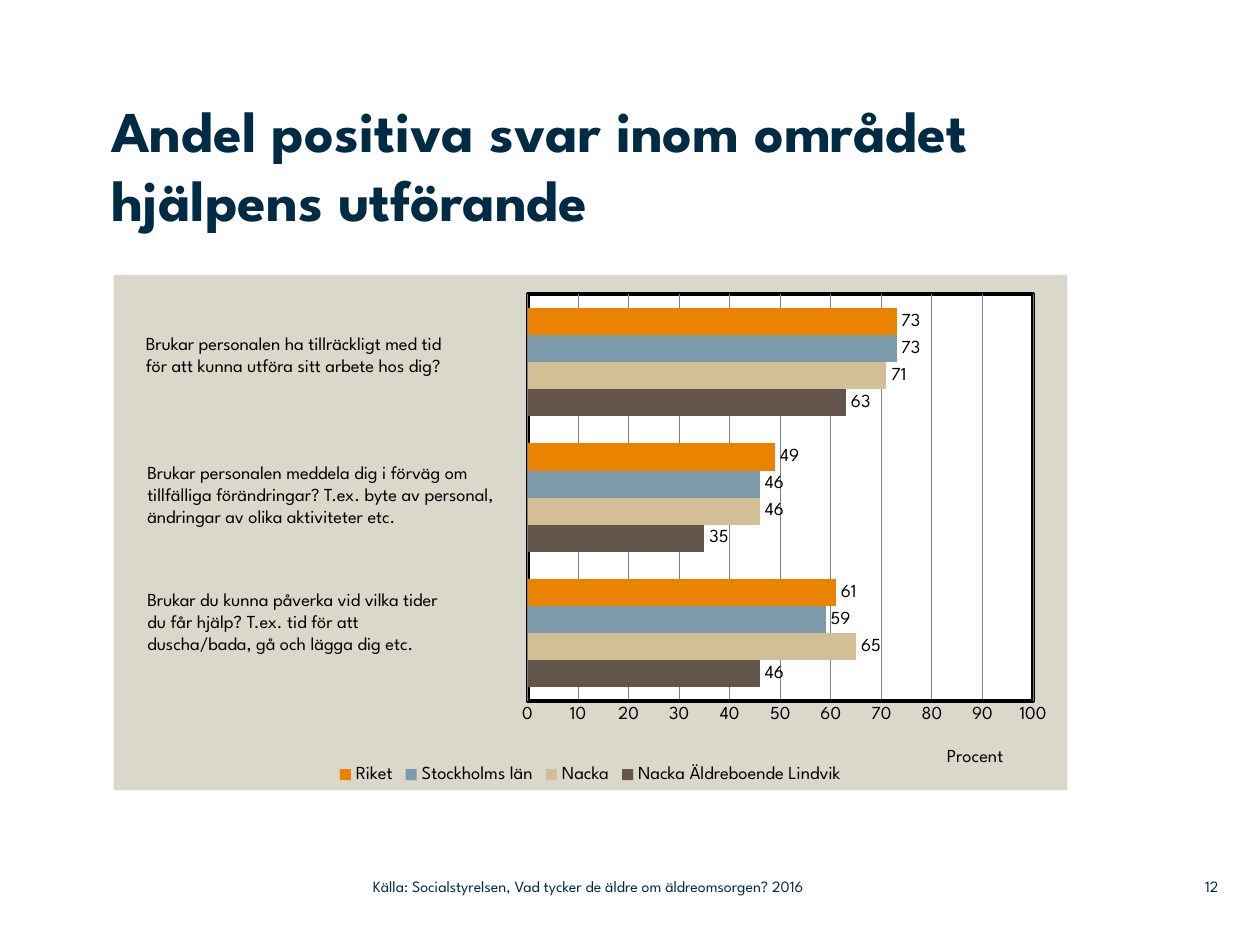
from lxml import etree
from pptx import Presentation
from pptx import util as u
from pptx.chart.data import CategoryChartData
from pptx.dml.color import RGBColor
from pptx.enum import chart as ch, text
from pptx.oxml import parse_xml
from pptx.oxml.ns import nsdecls, qn

FONT = "League Spartan"
NAVY = "002B45"
BLACK = "000000"
SERIES = [
    ("Nacka Äldreboende Lindvik", (46, 35, 63), "635549"),
    ("Nacka", (65, 46, 71), "D3BF96"),
    ("Stockholms län", (59, 46, 73), "7D9AAA"),
    ("Riket", (61, 49, 73), "E98300"),
]
ASKS = [
    ((2.69, 6.58, 7.59, 1.14),
     ["Brukar personalen ha tillräckligt med tid",
      "för att kunna utföra sitt arbete hos dig?"]),
    ((2.72, 9.17, 7.54, 2.06),
     ["Brukar personalen meddela dig i förväg om tillfälliga förändringar? "
      "T.ex. byte av personal, ändringar av olika aktiviteter etc."]),
    ((2.72, 11.73, 7.54, 1.6),
     ["Brukar du kunna påverka vid vilka tider",
      "du får hjälp? T.ex. tid för att",
      "duscha/bada, gå och lägga dig etc."]),
]


def rgb(code):
    return RGBColor.from_string(code)


def style(font, size, color, bold=False):
    font.name, font.size, font.bold = FONT, u.Pt(size), bold
    font.color.rgb = rgb(color)


def write(slide, box, lines, size, color, bold=False, pad=True,
          mid=False, right=False):
    """Add a text box with one paragraph per line."""
    frame = slide.shapes.add_textbox(*map(u.Cm, box)).text_frame
    frame.word_wrap = True
    if not pad:
        frame.margin_left = frame.margin_right = 0
        frame.margin_top = frame.margin_bottom = 0
    if mid:
        frame.vertical_anchor = text.MSO_ANCHOR.MIDDLE
    frame.text = "\n".join(lines)
    for par in frame.paragraphs:
        style(par.font, size, color, bold)
        if right:
            par.alignment = text.PP_ALIGN.RIGHT


def place(node, index, inner=False, **spots):
    """Give a chart part a manual layout, in shares of the chart."""
    for old in node.findall(qn("c:layout")):
        node.remove(old)
    lay = etree.Element(qn("c:layout"))
    man = etree.SubElement(lay, qn("c:manualLayout"))
    if inner:
        etree.SubElement(man, qn("c:layoutTarget"), val="inner")
    for key in "xy":
        etree.SubElement(man, qn(f"c:{key}Mode"), val="edge")
    for key, val in spots.items():
        etree.SubElement(man, qn(f"c:{key}"), val=str(val))
    node.insert(index, lay)


def area(fill, line):
    """Build the fill and outline of a chart area."""
    return parse_xml(
        f'<c:spPr {nsdecls("c", "a")}><a:solidFill><a:srgbClr val="{fill}"/>'
        f'</a:solidFill>{line}</c:spPr>')


def plot_bars(slide, box):
    data = CategoryChartData()
    data.categories = ["1", "2", "3"]
    for name, vals, _ in SERIES:
        data.add_series(name, vals)
    chart = slide.shapes.add_chart(
        ch.XL_CHART_TYPE.BAR_CLUSTERED, *map(u.Cm, box), data).chart
    chart.has_title = False
    style(chart.font, 10.5, BLACK)

    plot = chart.plots[0]
    plot.gap_width, plot.overlap = 100, 0
    plot.vary_by_categories = False
    for ser, (_, _, color) in zip(plot.series, SERIES):
        ser.format.fill.solid()
        ser.format.fill.fore_color.rgb = rgb(color)
        tags = ser.data_labels
        tags.show_value = True
        tags.position = ch.XL_LABEL_POSITION.OUTSIDE_END
        style(tags.font, 10.5, BLACK)

    chart.category_axis.visible = False
    axis = chart.value_axis
    axis.minimum_scale, axis.maximum_scale, axis.major_unit = 0, 100, 10
    axis.major_tick_mark = ch.XL_TICK_MARK.NONE
    axis.format.line.width = u.Pt(2)
    axis.format.line.color.rgb = rgb(BLACK)
    grid = axis.major_gridlines.format.line
    grid.width = u.Pt(0.5)
    grid.color.rgb = rgb("808080")
    style(axis.tick_labels.font, 10.5, BLACK)
    title = axis.axis_title
    title.text_frame.text = "Procent"
    style(title.text_frame.paragraphs[0].font, 10.5, BLACK)

    chart.has_legend = True
    key = chart.legend
    key.position = ch.XL_LEGEND_POSITION.BOTTOM
    key.include_in_layout = False
    style(key.font, 10.5, BLACK)

    root = chart._chartSpace
    field = root.find(".//" + qn("c:plotArea"))
    place(field, 0, True, x=0.434, y=0.038, w=0.53, h=0.789)
    place(root.find(".//" + qn("c:valAx") + "/" + qn("c:title")), 1,
          x=0.87, y=0.91)
    place(root.find(".//" + qn("c:legend")), 1, x=0.23, y=0.94, w=0.54, h=0.06)
    field.append(area(
        "FFFFFF", f'<a:ln w="{u.Pt(2.25)}"><a:solidFill>'
        f'<a:srgbClr val="{BLACK}"/></a:solidFill></a:ln>'))
    root.find(qn("c:txPr")).addprevious(
        area("DAD7CB", "<a:ln><a:noFill/></a:ln>"))


def main():
    prs = Presentation()
    prs.slide_width, prs.slide_height = u.Cm(25.4), u.Cm(19.05)
    slide = prs.slides.add_slide(prs.slide_layouts[6])
    plot_bars(slide, (2.29, 5.54, 19.23, 10.39))
    write(slide, (2.24, 1.91, 19.3, 3.61),
          ["Andel positiva svar inom området hjälpens utförande"],
          33, NAVY, bold=True, pad=False)
    for box, lines in ASKS:
        write(slide, box, lines, 10.5, BLACK)
    write(slide, (23.37, 17.5, 1.19, 0.74), ["12"], 9, NAVY,
          pad=False, mid=True, right=True)
    write(slide, (7.52, 17.5, 11.25, 0.74),
          ["Källa: Socialstyrelsen, Vad tycker de äldre om äldreomsorgen? 2016"],
          9, NAVY, pad=False, mid=True)
    prs.save("out.pptx")


if __name__ == "__main__":
    main()
